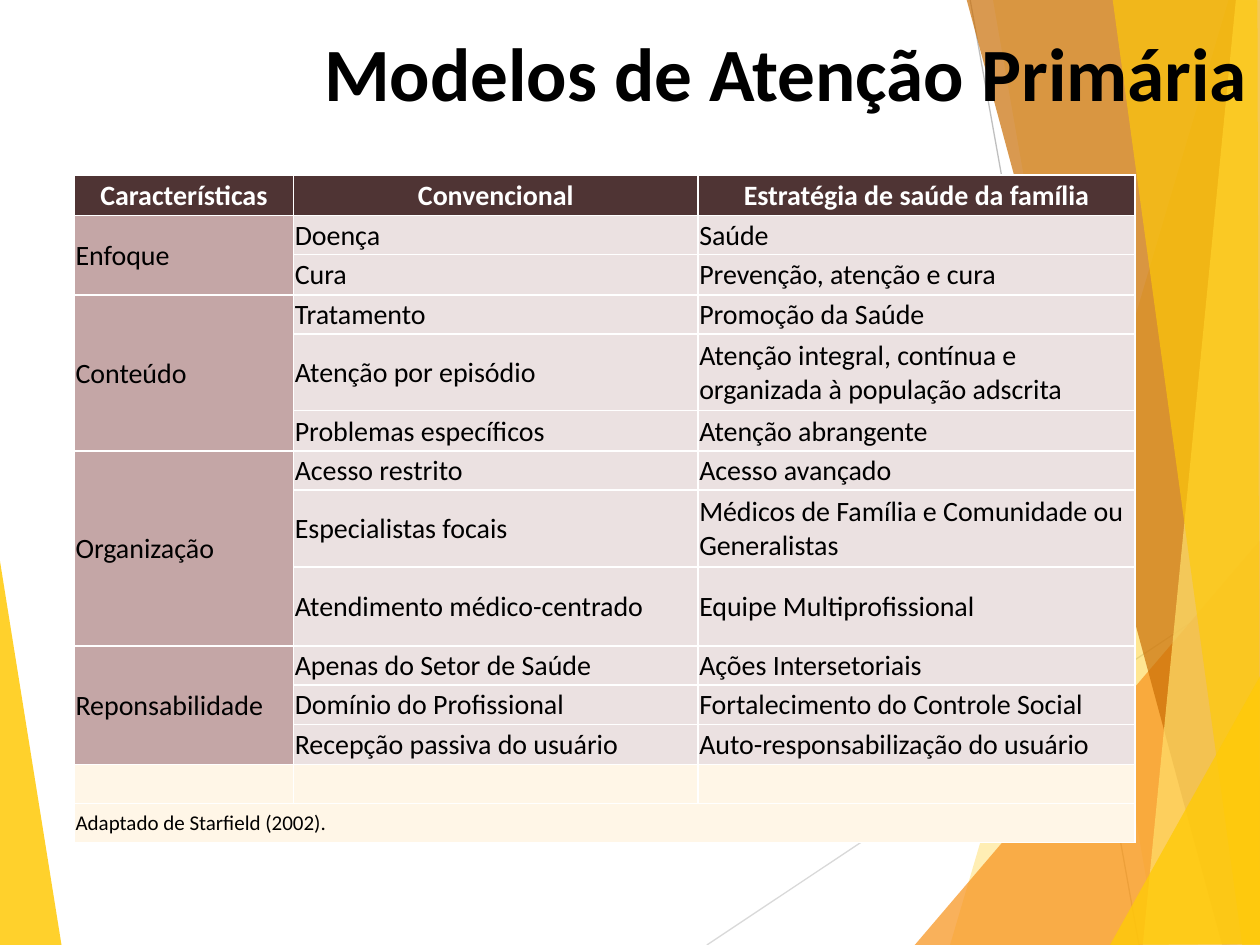
import pptx
import pptx.util
import pptx.dml.color
import pptx.enum.shapes
import pptx.enum.text
import pptx.oxml.ns
import lxml.etree

Inches, Pt = pptx.util.Inches, pptx.util.Pt
RGBColor = pptx.dml.color.RGBColor
ALIGN, ANCHOR = pptx.enum.text.PP_ALIGN, pptx.enum.text.MSO_ANCHOR
qn = pptx.oxml.ns.qn

WHITE = RGBColor(0xFF, 0xFF, 0xFF)
BLACK = RGBColor(0, 0, 0)
YELLOW = RGBColor(0xFF, 0xCA, 0x08)
PALE_YELLOW = RGBColor(0xFF, 0xDF, 0x6B)
ORANGE = RGBColor(0xF8, 0x93, 0x1D)
BROWN = RGBColor(0xCA, 0x6F, 0x06)
LIGHT_GREY = RGBColor(0xD9, 0xD9, 0xD9)
GREY = RGBColor(0xBF, 0xBF, 0xBF)
HEADER = RGBColor(0x4F, 0x34, 0x34)
ROSE = RGBColor(0xC4, 0xA6, 0xA6)
PALE_ROSE = RGBColor(0xEB, 0xE1, 0xE1)
CREAM = RGBColor(0xFF, 0xF6, 0xE7)


def add_facet(s, points, color, opacity):
    points = [(Inches(x), Inches(y)) for x, y in points]
    fb = s.shapes.build_freeform(*points[0], scale=1.0)
    fb.add_line_segments(points[1:], close=True)
    sp = fb.convert_to_shape()
    sp.shadow.inherit = False
    sp.fill.solid()
    sp.fill.fore_color.rgb = color
    sp.line.fill.background()
    clr = sp._element.spPr.find(qn("a:solidFill"))[0]
    lxml.etree.SubElement(clr, qn("a:alpha"), val=str(opacity * 1000))


def add_ray(s, x1, y1, x2, y2, color):
    cx = s.shapes.add_connector(pptx.enum.shapes.MSO_CONNECTOR.STRAIGHT,
                                Inches(x1), Inches(y1), Inches(x2), Inches(y2))
    cx.line.color.rgb = color
    cx.line.width = Pt(0.75)
    lxml.etree.SubElement(cx._element.spPr, qn("a:effectLst"))


prs = pptx.Presentation()
prs.slide_width, prs.slide_height = Inches(10), Inches(7.5)
s = prs.slides.add_slide(prs.slide_layouts[5])

add_facet(s, [(-0.01, 4.39), (0.49, 7.51), (-0.01, 7.5)], YELLOW, 85)
add_ray(s, 5.61, 7.5, 10.01, 4.57, LIGHT_GREY)
add_ray(s, 7.7, 0, 9.04, 7.5, GREY)
facets = [
    ([(9.75, 0), (7.54, 7.5), (10.02, 7.51), (10.01, 0.01)], YELLOW, 30),
    ([(7.88, -0.01), (9.19, 7.5), (10.01, 7.5), (10.01, -0.01)], YELLOW, 20),
    ([(7.26, 7.5), (10, 4.29), (10.01, 7.5)], ORANGE, 72),
    ([(7.67, -0.01), (9.7, 7.5), (10.01, 7.49), (10.01, -0.01)], BROWN, 70),
    ([(9.81, -0.01), (9.07, 7.5), (10.01, 7.5), (10, -0.01)], PALE_YELLOW, 70),
    ([(8.83, -0.01), (9.86, 7.5), (10, 7.5), (9.98, -0.01)], YELLOW, 65),
    ([(8.81, 7.5), (10.01, 5.35), (10.01, 7.49)], YELLOW, 80),
]
for points, color, opacity in facets:
    add_facet(s, points, color, opacity)

rows = [
    ("Características", "Convencional", "Estratégia de saúde da família"),
    ("Enfoque", "Doença", "Saúde"),
    ("", "Cura", "Prevenção, atenção e cura"),
    ("Conteúdo", "Tratamento", "Promoção da Saúde"),
    ("", "Atenção por episódio",
     "Atenção integral, contínua e organizada à população adscrita"),
    ("", "Problemas específicos", "Atenção abrangente"),
    ("Organização", "Acesso restrito", "Acesso avançado"),
    ("", "Especialistas focais", "Médicos de Família e Comunidade ou Generalistas"),
    ("", "Atendimento médico-centrado", "Equipe Multiprofissional"),
    ("Reponsabilidade", "Apenas do Setor de Saúde", "Ações Intersetoriais"),
    ("", "Domínio do Profissional", "Fortalecimento do Controle Social"),
    ("", "Recepção passiva do usuário", "Auto-responsabilização do usuário"),
    ("", "", ""),
    ("Adaptado de Starfield (2002).", "", ""),
]
widths = [1.74, 3.21, 3.47]
heights = [0.32, 0.31, 0.32, 0.31, 0.61, 0.32, 0.31, 0.61, 0.63,
           0.31, 0.31, 0.32, 0.31, 0.31]
tbl = s.shapes.add_table(len(rows), len(widths), Inches(0.59), Inches(1.39),
                         Inches(sum(widths)), Inches(sum(heights))).table
for col, width in zip(tbl.columns, widths):
    col.width = Inches(width)
for row, height in zip(tbl.rows, heights):
    row.height = Inches(height)
for top, left, bottom, right in [(1, 0, 2, 0), (3, 0, 5, 0), (6, 0, 8, 0),
                                 (9, 0, 11, 0), (13, 0, 13, 2)]:
    tbl.cell(top, left).merge(tbl.cell(bottom, right))

for i, texts in enumerate(rows):
    for j, text in enumerate(texts):
        cell = tbl.cell(i, j)
        cell.margin_left = cell.margin_right = cell.margin_top = Inches(0.01)
        cell.margin_bottom = 0
        cell.vertical_anchor = ANCHOR.MIDDLE
        for side in ("a:lnL", "a:lnR", "a:lnT", "a:lnB"):
            ln = lxml.etree.SubElement(cell._tc.tcPr, qn(side), w=str(Pt(1)))
            fill = lxml.etree.SubElement(ln, qn("a:solidFill"))
            lxml.etree.SubElement(fill, qn("a:srgbClr"), val=str(WHITE))
        cell.fill.solid()
        if i == 0:
            cell.fill.fore_color.rgb = HEADER
        elif i >= 12:
            cell.fill.fore_color.rgb = CREAM
        else:
            cell.fill.fore_color.rgb = ROSE if j == 0 else PALE_ROSE
        p = cell.text_frame.paragraphs[0]
        p.alignment = ALIGN.CENTER if i == 0 else ALIGN.LEFT
        if not text:
            lxml.etree.SubElement(p._p, qn("a:endParaRPr"), sz="1200")
            continue
        r = p.add_run()
        r.text = text
        r.font.name = "Calibri"
        r.font.size = Pt(12 if i == 13 else 16)
        r.font.bold = i == 0
        r.font.color.rgb = WHITE if i == 0 else BLACK

title = s.shapes.title
s.shapes._spTree.append(title._element)
title.left, title.top = Inches(0.79), Inches(0.16)
title.width, title.height = Inches(9.21), Inches(0.82)
tf = title.text_frame
tf.word_wrap = True
tf.auto_size = pptx.enum.text.MSO_AUTO_SIZE.SHAPE_TO_FIT_TEXT
tf.vertical_anchor = ANCHOR.TOP
p = tf.paragraphs[0]
p.alignment = ALIGN.RIGHT
r = p.add_run()
r.text = "Modelos de Atenção Primária"
r.font.name = "Calibri"
r.font.size = Pt(43)
r.font.bold = True
r.font.color.rgb = BLACK

prs.save("out.pptx")
